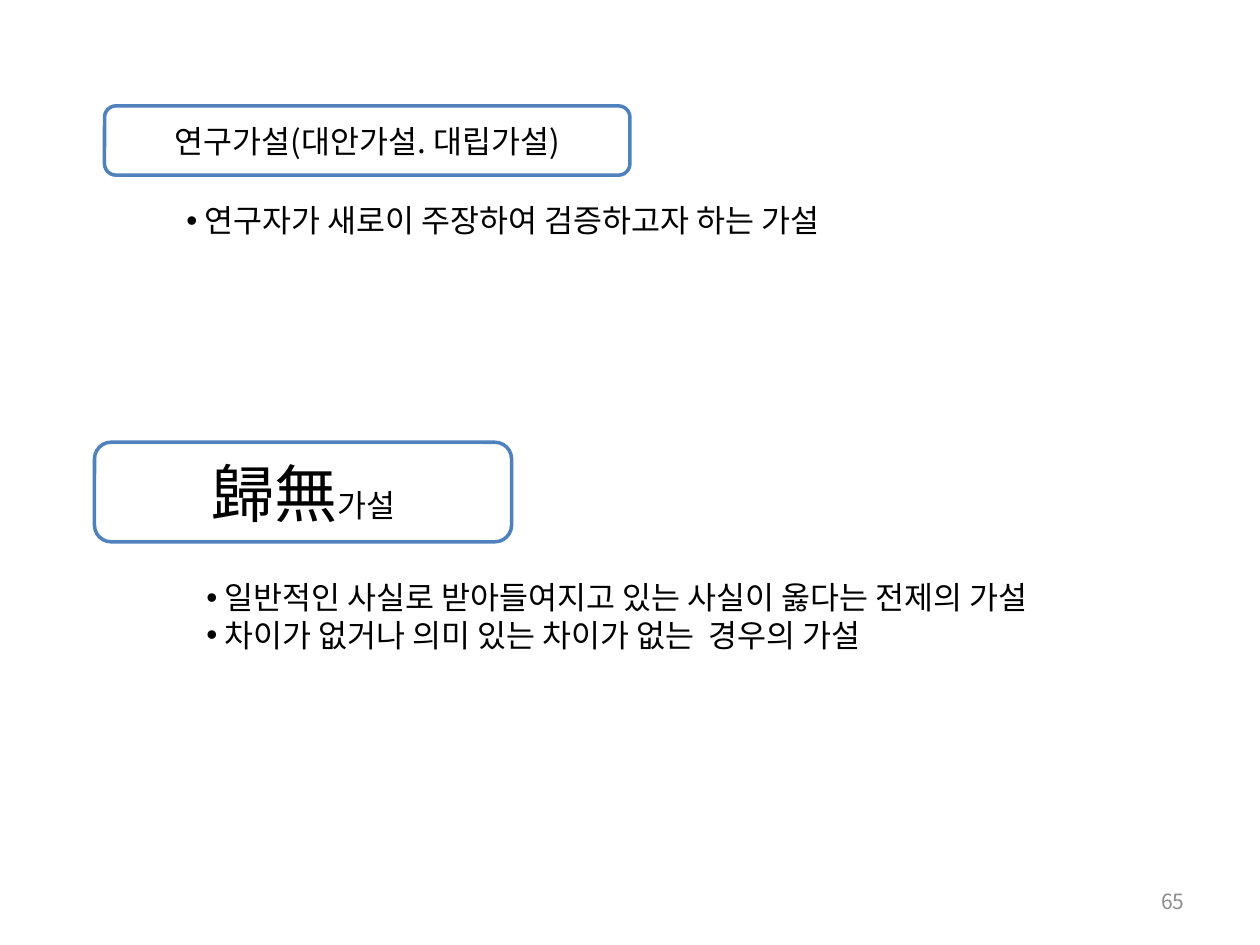
from lxml import etree
from pptx import Presentation
from pptx import util as u
from pptx.dml.color import RGBColor
from pptx.enum import shapes, text
from pptx.oxml.ns import qn

FACE = "Noto Sans CJK KR"
MID, TOP = text.MSO_ANCHOR.MIDDLE, text.MSO_ANCHOR.TOP
LEFT, MID_P, RIGHT = text.PP_ALIGN.LEFT, text.PP_ALIGN.CENTER, text.PP_ALIGN.RIGHT


def color(code):
    return RGBColor.from_string(code)


def write(shape, paras, align=LEFT, anchor=TOP, ink="000000", dot=False):
    """Fill a shape with paragraphs, each a list of (words, size) runs."""
    frame = shape.text_frame
    for key, val in {"word_wrap": True, "vertical_anchor": anchor}.items():
        setattr(frame, key, val)
    for i, runs in enumerate(paras):
        para = frame.add_paragraph() if i else frame.paragraphs[0]
        para.alignment = align
        if dot:
            props = para._p.get_or_add_pPr()
            etree.SubElement(props, qn("a:buFont")).set("typeface", "Arial")
            etree.SubElement(props, qn("a:buChar")).set("char", "•")
        for words, size in runs:
            run = para.add_run()
            run.text = words
            for key, val in {"name": FACE, "size": u.Pt(size)}.items():
                setattr(run.font, key, val)
            run.font.color.rgb = color(ink)
            # East Asian face, for the Korean and Chinese letters
            etree.SubElement(run._r.get_or_add_rPr(), qn("a:ea")).set("typeface", FACE)


deck = Presentation()
deck.slide_width, deck.slide_height = u.Inches(10), u.Inches(7.5)
slide = deck.slides.add_slide(deck.slide_layouts[6])

# Page number
page = slide.shapes.add_textbox(*map(u.Inches, (7.17, 6.95, 2.33, 0.4)))
write(page, [[("65", 12)]], RIGHT, MID, "8C8C8C")

# Framed headings
heads = [
    ((0.83, 0.84, 4.17, 0.55), [("연구가설(대안가설. 대립가설)", 18)]),
    ((0.75, 3.51, 3.31, 0.79), [("歸無", 36), ("가설", 18)]),
]
for place, runs in heads:
    head = slide.shapes.add_shape(
        shapes.MSO_SHAPE.ROUNDED_RECTANGLE, *map(u.Inches, place))
    head.shadow.inherit = False
    head.fill.solid()
    head.fill.fore_color.rgb = color("FFFFFF")
    head.line.color.rgb = color("4F81BD")
    head.line.width = u.Pt(2)
    write(head, [runs], MID_P, MID)

# Bulleted notes below the headings
notes = [
    ((1.38, 1.55, 7.01, 0.4), ["연구자가 새로이 주장하여 검증하고자 하는 가설"]),
    ((1.54, 4.54, 7.72, 0.71), [
        "일반적인 사실로 받아들여지고 있는 사실이 옳다는 전제의 가설",
        "차이가 없거나 의미 있는 차이가 없는  경우의 가설"]),
]
for place, lines in notes:
    note = slide.shapes.add_textbox(*map(u.Inches, place))
    note.text_frame.auto_size = text.MSO_AUTO_SIZE.SHAPE_TO_FIT_TEXT
    write(note, [[(" " + line, 18)] for line in lines], dot=True)

deck.save("out.pptx")
